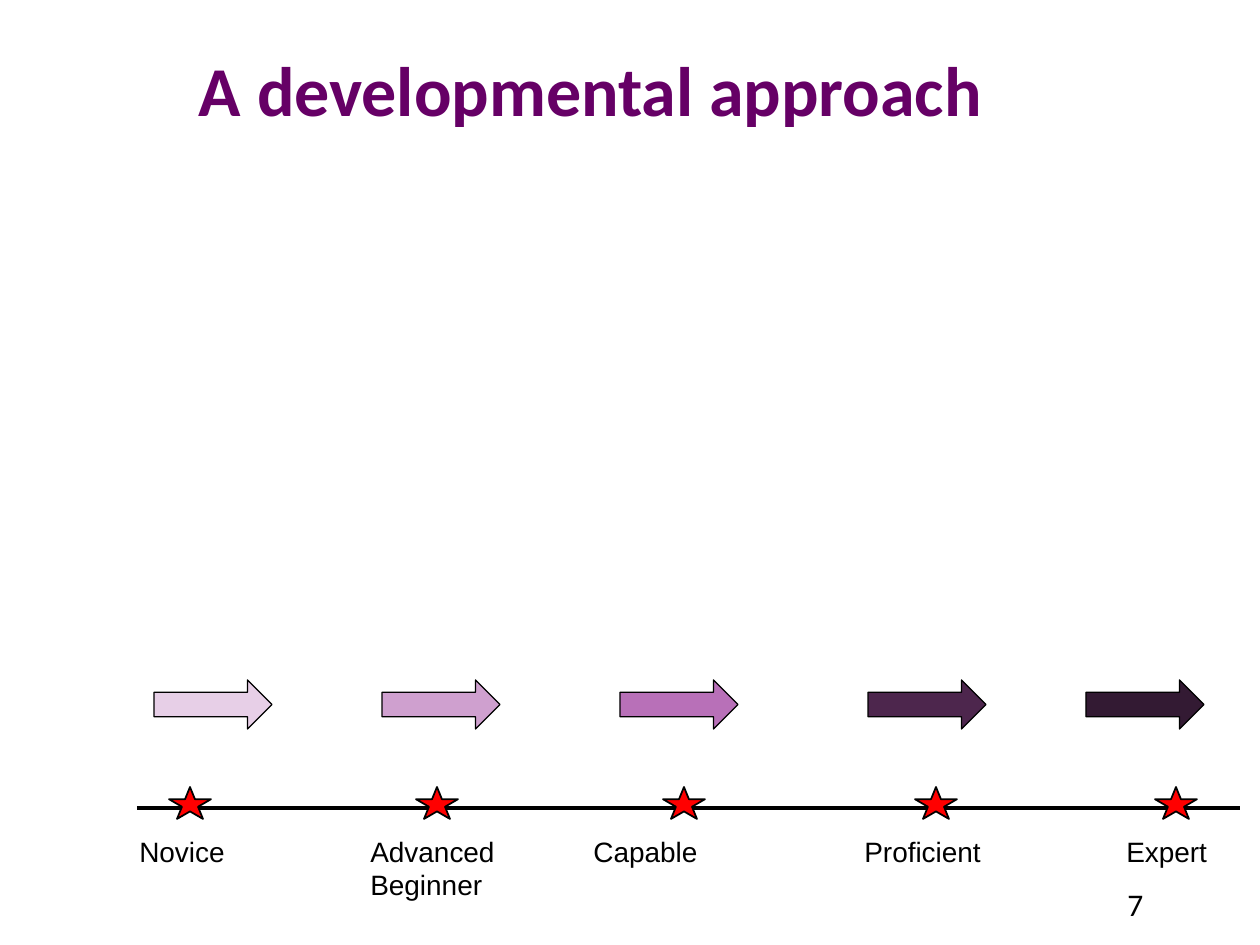
"""Build a slide showing five stages of development along a line."""
from dataclasses import dataclass

from lxml.etree import SubElement
from pptx import Presentation
from pptx.dml.color import RGBColor
from pptx.enum.shapes import MSO_CONNECTOR, MSO_SHAPE
from pptx.enum.text import MSO_ANCHOR, PP_ALIGN
from pptx.oxml.ns import qn
from pptx.slide import Slide
from pptx.text.text import TextFrame
from pptx.util import Emu, Pt

EMU_PER_PX = 914400 / 126
BLACK = "000000"
STAR_RED = "FF0000"
TITLE_PURPLE = "660066"
ARROW_TOP, ARROW_WIDTH, ARROW_HEIGHT = 680, 118, 49
STAR_TOP, STAR_WIDTH, STAR_HEIGHT = 787, 42, 32
LABEL_TOP, LABEL_HEIGHT = 828, 54
LINE_LEFT, LINE_RIGHT, LINE_Y = 137, 1240, 808


@dataclass(frozen=True)
class Stage:
    """One stage of development with the places of its three parts."""
    lines: tuple[str, ...]
    color: str
    arrow_left: int
    star_left: int
    label_left: int
    label_width: int


STAGES = (
    Stage(("Novice",), "E7CFE7", 154, 169, 127, 136),
    Stage(("Advanced", "Beginner"), "CFA0CF", 382, 416, 358, 166),
    Stage(("Capable",), "B870B8", 620, 663, 581, 144),
    Stage(("Proficient",), "4D264D", 868, 915, 852, 171),
    Stage(("Expert",), "331A33", 1086, 1155, 1114, 126),
)


def px(length: int) -> Emu:
    """Turn pixels into EMU."""
    return Emu(round(length * EMU_PER_PX))


def rgb(value: str) -> RGBColor:
    """Turn a hex string into a colour."""
    return RGBColor.from_string(value)


def write(frame: TextFrame, lines: tuple[str, ...], size: int, font: str,
          color: str = BLACK, bold: bool = False) -> None:
    """Write lines into the first paragraph, one run each."""
    paragraph = frame.paragraphs[0]
    for index, line in enumerate(lines):
        if index:
            paragraph.add_line_break()
        run = paragraph.add_run()
        run.text = line
        run.font.size = Pt(size)
        run.font.name = font
        run.font.bold = bold
        run.font.color.rgb = rgb(color)


def add_title(slide: Slide, text: str) -> None:
    """Place and format the slide title."""
    title = slide.shapes.title
    title.left, title.top, title.width, title.height = map(px, (59, 29, 1063, 108))
    frame = title.text_frame
    frame.vertical_anchor = MSO_ANCHOR.BOTTOM
    frame.paragraphs[0].alignment = PP_ALIGN.CENTER
    write(frame, (text,), 40, "Calibri", TITLE_PURPLE, bold=True)


def add_text(slide: Slide, left: int, top: int, width: int, height: int,
             lines: tuple[str, ...], size: int, font: str) -> None:
    """Add a wrapping text box."""
    box = slide.shapes.add_textbox(px(left), px(top), px(width), px(height))
    box.text_frame.word_wrap = True
    write(box.text_frame, lines, size, font)


def add_marker(slide: Slide, preset: MSO_SHAPE, left: int, top: int, width: int,
               height: int, fill: str, line_width: float) -> None:
    """Add a filled preset shape with a black outline."""
    marker = slide.shapes.add_shape(preset, px(left), px(top), px(width), px(height))
    marker.shadow.inherit = False
    marker.fill.solid()
    marker.fill.fore_color.rgb = rgb(fill)
    marker.line.color.rgb = rgb(BLACK)
    marker.line.width = Pt(line_width)


def add_timeline(slide: Slide) -> None:
    """Draw the line that the stages stand on."""
    timeline = slide.shapes.add_connector(
        MSO_CONNECTOR.STRAIGHT, px(LINE_LEFT), px(LINE_Y), px(LINE_RIGHT), px(LINE_Y))
    timeline.line.color.rgb = rgb(BLACK)
    timeline.line.width = Pt(2.5)
    SubElement(timeline._element.spPr, qn("a:effectLst"))


def add_stage(slide: Slide, stage: Stage) -> None:
    """Draw the star, label and arrow of a stage."""
    add_marker(slide, MSO_SHAPE.STAR_5_POINT, stage.star_left, STAR_TOP,
               STAR_WIDTH, STAR_HEIGHT, STAR_RED, 1)
    add_text(slide, stage.label_left, LABEL_TOP, stage.label_width,
             LABEL_HEIGHT if len(stage.lines) == 1 else 89, stage.lines, 16, "Arial")
    add_marker(slide, MSO_SHAPE.RIGHT_ARROW, stage.arrow_left, ARROW_TOP,
               ARROW_WIDTH, ARROW_HEIGHT, stage.color, 0.75)


def main() -> None:
    """Build and save the slide."""
    deck = Presentation()
    deck.slide_width, deck.slide_height = px(1260), px(945)
    slide = deck.slides.add_slide(deck.slide_layouts[5])
    add_title(slide, "A developmental approach")
    add_text(slide, 1115, 879, 116, 50, ("7",), 18, "Calibri")
    add_timeline(slide)
    for stage in STAGES:
        add_stage(slide, stage)
    deck.save("out.pptx")


if __name__ == "__main__":
    main()
